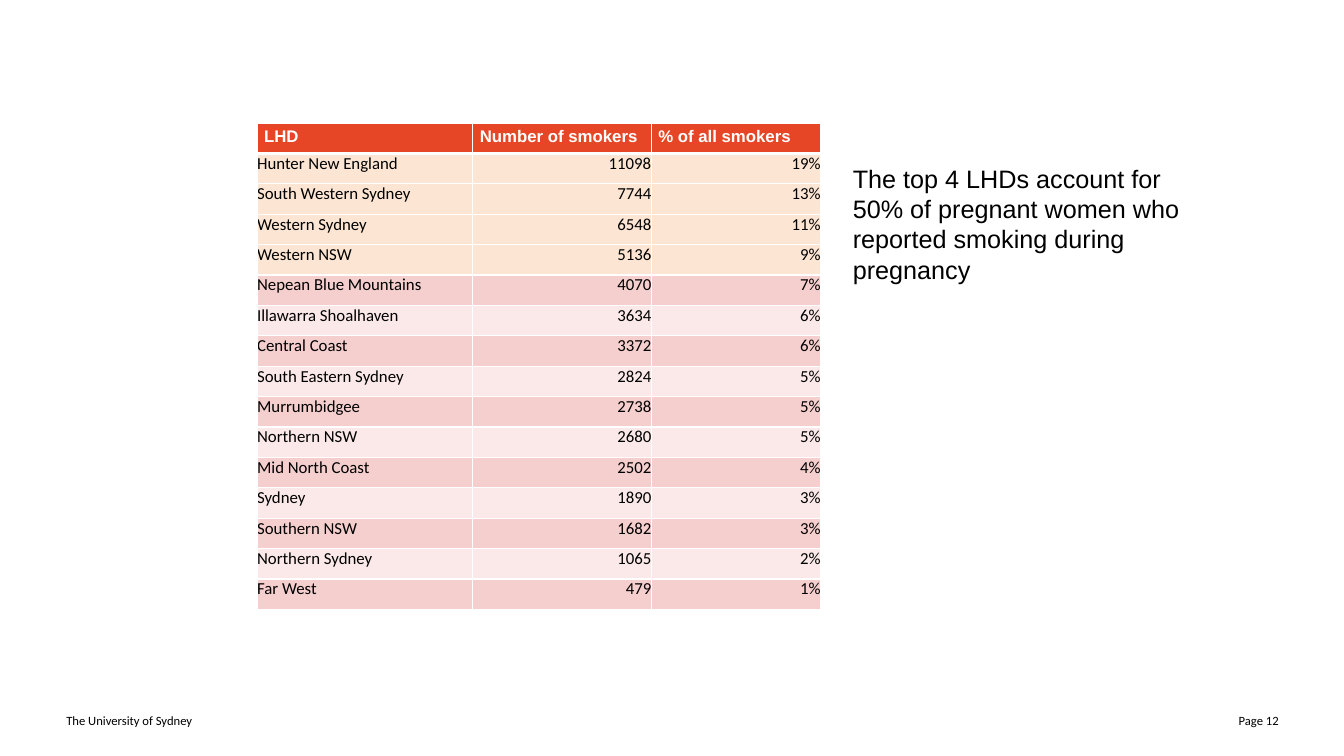
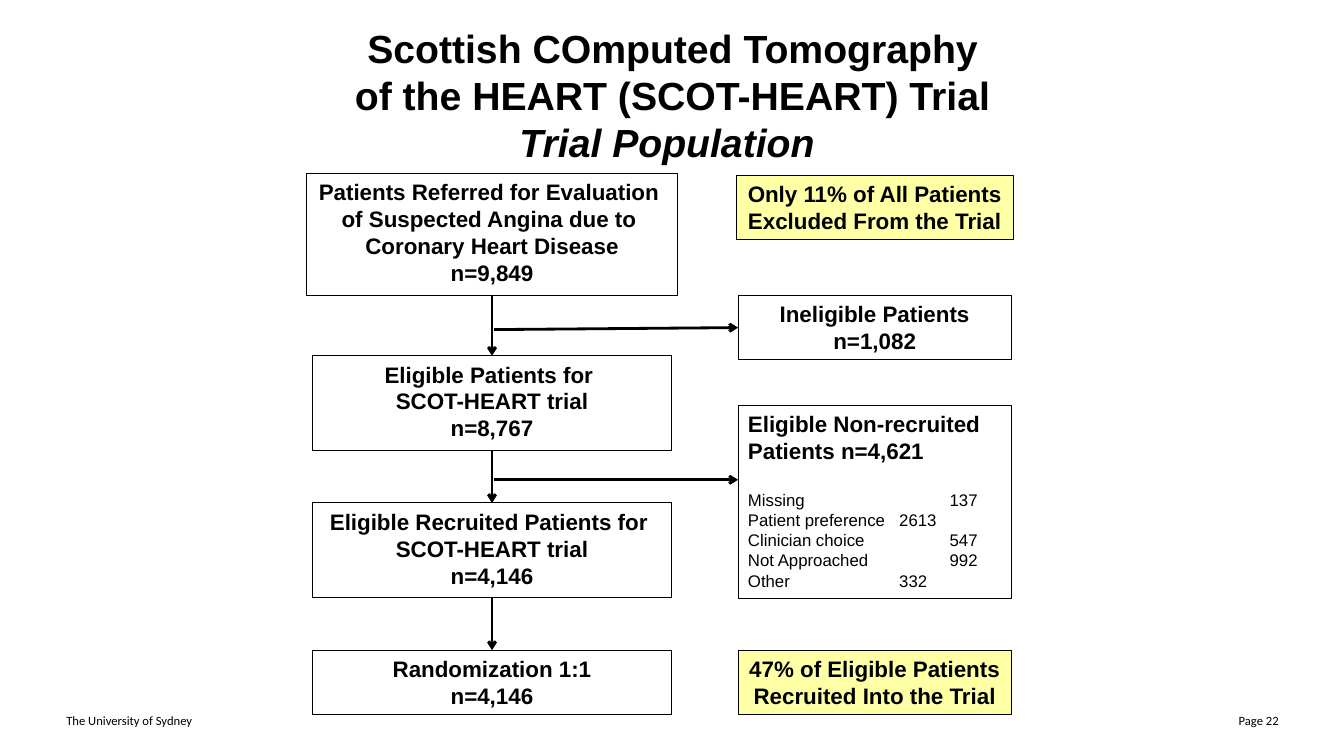
from dataclasses import dataclass

from lxml import etree
from pptx import Presentation
from pptx.dml import color as dml
from pptx.enum import shapes, text
from pptx.oxml import ns
from pptx.util import Inches, Pt


# Theme: colours, fonts and type sizes
@dataclass(frozen=True)
class Theme:
    ink: str = "000000"
    paper: str = "FFFFFF"
    brand: str = "E64626"
    peach: str = "FCE6D3"
    rose: str = "F5CFCD"
    blush: str = "FAE9E8"
    note: str = "FFFFA6"
    sans: str = "Arial"
    small: str = "Calibri"
    title: int = 28
    lead: int = 18
    box: int = 16
    body: int = 12
    foot: int = 9


T = Theme()
LEFT, MID, RIGHT = text.PP_ALIGN.LEFT, text.PP_ALIGN.CENTER, text.PP_ALIGN.RIGHT
TOP, BOTTOM = 0, 2

HEAD = ("LHD", "Number of smokers", "% of all smokers")
ROWS = (
    ("Hunter New England", "11098", "19%"),
    ("South Western Sydney", "7744", "13%"),
    ("Western Sydney", "6548", "11%"),
    ("Western NSW", "5136", "9%"),
    ("Nepean Blue Mountains", "4070", "7%"),
    ("Illawarra Shoalhaven", "3634", "6%"),
    ("Central Coast", "3372", "6%"),
    ("South Eastern Sydney", "2824", "5%"),
    ("Murrumbidgee", "2738", "5%"),
    ("Northern NSW", "2680", "5%"),
    ("Mid North Coast", "2502", "4%"),
    ("Sydney", "1890", "3%"),
    ("Southern NSW", "1682", "3%"),
    ("Northern Sydney", "1065", "2%"),
    ("Far West", "479", "1%"),
)
TOP_ROWS = 4

# Label, count and tab stop of each reason
CAUSES = (
    ("Missing", "137", 2),
    ("Patient preference", "2613", 1.5),
    ("Clinician choice", "547", 2),
    ("Not Approached", "992", 2),
    ("Other", "332", 1.5),
)


# Basic helpers
def rgb(code):
    return dml.RGBColor.from_string(code)


def apply(item, values):
    for name, value in values.items():
        setattr(item, name, value)


def node(parent, tag, **attrs):
    return etree.SubElement(parent, ns.qn(tag), attrs)


def write(par, words, size, align=LEFT, face=T.sans, ink=T.ink, **style):
    par.alignment = align
    run = par.add_run()
    run.text = words
    apply(run.font, {"size": Pt(size), "name": face, **style})
    run.font.color.rgb = rgb(ink)


def fill_text(frame, lines, size, **style):
    for i, line in enumerate(lines):
        par = frame.add_paragraph() if i else frame.paragraphs[0]
        write(par, line, size, **style)


def label(slide, at, lines, size, wrap=False, anchor=text.MSO_ANCHOR.TOP, **style):
    frame = slide.shapes.add_textbox(*map(Inches, at)).text_frame
    apply(frame, {"word_wrap": wrap, "vertical_anchor": anchor})
    fill_text(frame, lines, size, **style)


def footer(slide, page):
    for x, words, align in ((0.56, "The University of Sydney", LEFT),
                            (9.67, f"Page {page}", RIGHT)):
        label(slide, (x, 6.95, 3.11, 0.4), [words], T.foot, wrap=True,
              anchor=text.MSO_ANCHOR.MIDDLE, align=align, face=T.small)


# Table parts
def border(cell, base):
    props = cell._tc.get_or_add_tcPr()
    for side, width in (("L", 1), ("R", 1), ("T", 1), ("B", base)):
        line = node(props, f"a:ln{side}", w=str(Pt(width)))
        node(node(line, "a:solidFill"), "a:srgbClr", val=T.paper)


def paint(cell, words, back, pad, base=1, **style):
    border(cell, base)
    cell.fill.solid()
    cell.fill.fore_color.rgb = rgb(back)
    side, edge = map(Inches, pad)
    apply(cell, {"margin_left": side, "margin_right": side,
                 "margin_top": edge, "margin_bottom": edge})
    write(cell.text_frame.paragraphs[0], words, T.body, **style)


def shade(row):
    if row < TOP_ROWS:
        return T.peach
    return T.blush if row % 2 else T.rose


def smoker_table(slide):
    count = len(ROWS) + 1
    area = map(Inches, (2.55, 1.22, 5.59, 4.83))
    table = slide.shapes.add_table(count, len(HEAD), *area).table
    table.horz_banding = False
    for col, width in zip(table.columns, (2.14, 1.77, 1.68)):
        col.width = Inches(width)
    for row in table.rows:
        row.height = Inches(4.83 / count)
    for c, words in enumerate(HEAD):
        paint(table.cell(0, c), words, T.brand, (0.07, 0.04), base=3,
              ink=T.paper, bold=True)
    for r, row in enumerate(ROWS):
        for c, words in enumerate(row):
            paint(table.cell(r + 1, c), words, shade(r), (0, 0),
                  align=RIGHT if c else LEFT, face=T.small)


# Flow chart parts
def box(slide, at, lines, back=None, wrap=False, align=MID):
    shape = slide.shapes.add_shape(shapes.MSO_SHAPE.RECTANGLE, *map(Inches, at))
    shape.shadow.inherit = False
    if back:
        shape.fill.solid()
        shape.fill.fore_color.rgb = rgb(back)
    else:
        shape.fill.background()
    shape.line.color.rgb = rgb(T.ink)
    shape.line.width = Pt(0.75)
    frame = shape.text_frame
    apply(frame, {"word_wrap": wrap, "vertical_anchor": text.MSO_ANCHOR.TOP})
    fill_text(frame, lines, T.box, align=align, bold=True)
    return shape


def cause_list(frame):
    for i, (name, count, stop) in enumerate(CAUSES):
        par = frame.add_paragraph()
        tabs = node(par._p.get_or_add_pPr(), "a:tabLst")
        node(tabs, "a:tab", pos=str(Inches(stop)), algn="l")
        if not i:
            par.space_before = Pt(18.4)
        write(par, f"{name}\t{count}", T.body, bold=False)


def arrow(slide, start=(0, 0), end=(0, 0)):
    line = slide.shapes.add_connector(
        shapes.MSO_CONNECTOR.STRAIGHT, *map(Inches, (*start, *end)))
    line.line.color.rgb = rgb(T.ink)
    line.line.width = Pt(2)
    node(line.line._get_or_add_ln(), "a:tailEnd", type="arrow")
    node(line._element.spPr, "a:effectLst")
    return line


def heading(slide, lines):
    title = slide.shapes.title
    apply(title, dict(zip(("left", "top", "width", "height"),
                          map(Inches, (1.67, 0.19, 10, 1.51)))))
    frame = title.text_frame
    apply(frame, {"word_wrap": True, "auto_size": text.MSO_AUTO_SIZE.NONE,
                  "vertical_anchor": text.MSO_ANCHOR.TOP})
    fill_text(frame, lines, T.title, align=MID, bold=True)
    frame.paragraphs[-1].runs[0].font.italic = True


# Slides
def smoker_slide(deck):
    slide = deck.slides.add_slide(deck.slide_layouts[6])
    footer(slide, 12)
    smoker_table(slide)
    label(slide, (8.36, 1.57, 3.47, 1.31),
          ["The top 4 LHDs account for", "50% of pregnant women who",
           "reported smoking during", "pregnancy"], T.lead)


def trial_slide(deck):
    slide = deck.slides.add_slide(deck.slide_layouts[5])
    footer(slide, 22)
    heading(slide, ["Scottish COmputed Tomography",
                    "of the HEART (SCOT-HEART) Trial", "Trial Population "])

    # Main path
    steps = [box(slide, at, lines) for at, lines in (
        ((3.04, 1.72, 3.68, 1.21),
         ["Patients Referred for Evaluation ", "of Suspected Angina due to ",
          "Coronary Heart Disease", "n=9,849"]),
        ((3.1, 3.53, 3.56, 0.94),
         ["Eligible Patients for ", "SCOT-HEART trial", "n=8,767"]),
        ((3.1, 4.99, 3.56, 0.94),
         ["Eligible Recruited Patients for ", "SCOT-HEART trial", "n=4,146"]),
        ((3.1, 6.45, 3.56, 0.64), ["Randomization 1:1", "n=4,146"]),
    )]
    for above, below in zip(steps, steps[1:]):
        link = arrow(slide)
        link.begin_connect(above, BOTTOM)
        link.end_connect(below, TOP)

    # Patients who left the path
    out = box(slide, (7.32, 2.93, 2.71, 0.64), ["Ineligible Patients", "n=1,082"])
    rest = box(slide, (7.32, 4.02, 2.71, 1.92),
               ["Eligible Non-recruited", "Patients n=4,621"], wrap=True, align=LEFT)
    cause_list(rest.text_frame)
    arrow(slide, (4.9, 3.27), (7.32, 3.25)).end_connect(out, 1)
    arrow(slide, (4.9, 4.76), (7.32, 4.76))

    # Key findings
    box(slide, (7.3, 1.74, 2.75, 0.64),
        ["Only 11% of All Patients", "Excluded From the Trial"], T.note)
    box(slide, (7.32, 6.45, 2.71, 0.64),
        ["47% of Eligible Patients", "Recruited Into the Trial"], T.note)


def main():
    deck = Presentation()
    apply(deck, {"slide_width": Inches(13.33), "slide_height": Inches(7.5)})
    smoker_slide(deck)
    trial_slide(deck)
    deck.save("out.pptx")


if __name__ == "__main__":
    main()
